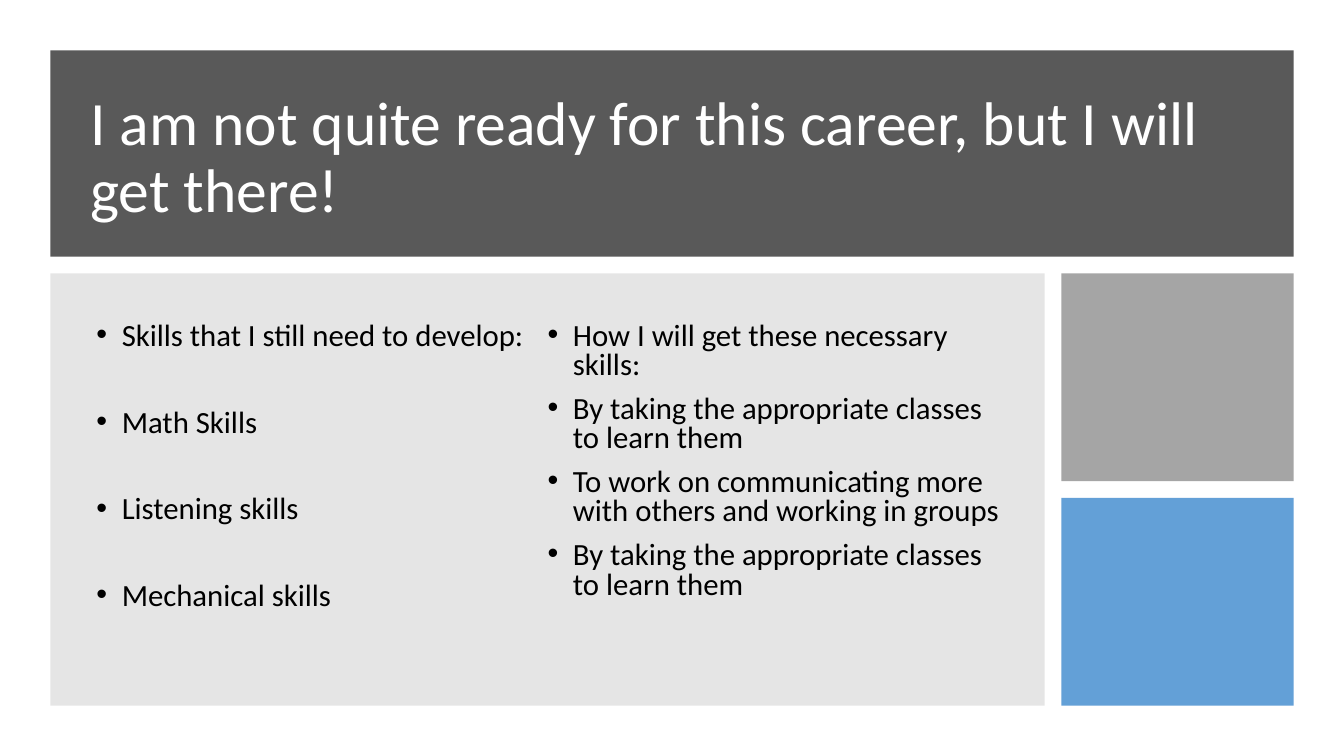
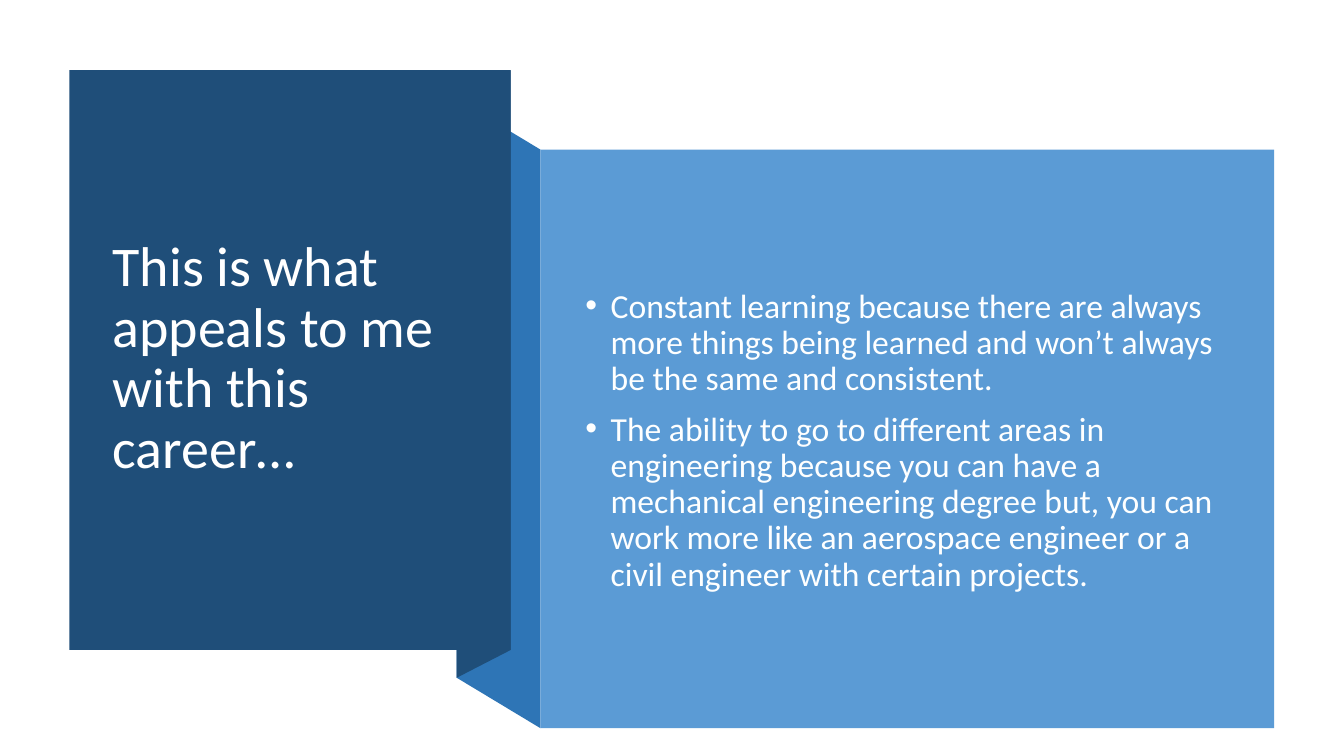
from pptx import Presentation
from pptx.dml.color import RGBColor
from pptx.enum.shapes import MSO_SHAPE
from pptx.enum.text import MSO_ANCHOR
from pptx.oxml.ns import qn
from pptx.util import Cm, Pt
from lxml.etree import SubElement

FONT = "Calibri"
WHITE = RGBColor(0xFF, 0xFF, 0xFF)
BLACK = RGBColor(0x00, 0x00, 0x00)
CHARCOAL = RGBColor(0x59, 0x59, 0x59)
MID_GRAY = RGBColor(0x80, 0x80, 0x80)
LIGHT_GRAY = RGBColor(0xA5, 0xA5, 0xA5)
BLUE = RGBColor(0x5B, 0x9B, 0xD5)
DARK_BLUE = RGBColor(0x2E, 0x75, 0xB6)
NAVY = RGBColor(0x1F, 0x4E, 0x79)
SOFT_WHITE = RGBColor(0xFE, 0xFF, 0xFF)

SLIDE_WIDTH, SLIDE_HEIGHT = 33.87, 19.05
INDENT = 0.64

SKILLS_TITLE = "I am not quite ready for this career, but I will get there!"
SKILL_COLUMNS = [
    (41, [
        "Skills that I still need to develop:",
        "Math Skills",
        "Listening skills",
        "Mechanical skills",
    ]),
    (10, [
        "How I will get these necessary skills:",
        "By taking the appropriate classes to learn them",
        "To work on communicating more with others and working in groups",
        "By taking the appropriate classes to learn them",
    ]),
]
APPEAL_TITLE = "This is what appeals to me with this career…"
APPEAL_POINTS = [
    "Constant learning because there are always more things being learned "
    "and won’t always be the same and consistent.",
    "The ability to go to different areas in engineering because you can have "
    "a mechanical engineering degree but, you can work more like an aerospace "
    "engineer or a civil engineer with certain projects.",
]


def paint(shape, color, opacity=100):
    shape.shadow.inherit = False
    shape.fill.solid()
    shape.fill.fore_color.rgb = color
    shape.line.fill.background()
    if opacity < 100:
        color_element = shape.fill._xPr.find(qn("a:solidFill"))[0]
        SubElement(color_element, qn("a:alpha"), val=str(opacity * 1000))


def add_block(slide, left, top, width, height, color, opacity=100):
    shape = slide.shapes.add_shape(
        MSO_SHAPE.RECTANGLE, Cm(left), Cm(top), Cm(width), Cm(height))
    paint(shape, color, opacity)


def add_polygon(slide, points, color):
    start, *others = [(Cm(x), Cm(y)) for x, y in points]
    builder = slide.shapes.build_freeform(*start)
    builder.add_line_segments(others, close=True)
    paint(builder.convert_to_shape(), color)


def add_text(slide, box, lines, size, color, spacing=0.9, gap=0,
             bullets=False, anchor=MSO_ANCHOR.MIDDLE):
    frame = slide.shapes.add_textbox(*map(Cm, box)).text_frame
    frame.word_wrap = True
    frame.vertical_anchor = anchor
    for index, line in enumerate(lines):
        paragraph = frame.paragraphs[0] if index == 0 else frame.add_paragraph()
        paragraph.line_spacing = spacing
        paragraph.space_after = Pt(gap)
        if bullets:
            properties = paragraph._p.get_or_add_pPr()
            properties.set("marL", str(Cm(INDENT)))
            properties.set("indent", str(-Cm(INDENT)))
            SubElement(properties, qn("a:buFont"), typeface="Arial")
            SubElement(properties, qn("a:buChar"), char="•")
        run = paragraph.add_run()
        run.text = line
        run.font.name = FONT
        run.font.size = Pt(size)
        run.font.color.rgb = color


def build_skills(slide):
    margin, gap = 1.27, 0.42
    banner_height, tile_width = 5.2, 5.85
    content_width = SLIDE_WIDTH - 2 * margin
    panel_top = margin + banner_height + gap
    panel_height = SLIDE_HEIGHT - margin - panel_top
    panel_width = content_width - tile_width - gap
    tile_left = margin + panel_width + gap
    tile_height = (panel_height - gap) / 2

    add_block(slide, margin, margin, content_width, banner_height, CHARCOAL)
    add_text(slide, (2.03, 2.03, 29.62, 3.96), [SKILLS_TITLE], 44, WHITE)
    add_block(slide, margin, panel_top, panel_width, panel_height, MID_GRAY, 20)
    for index, (color, opacity) in enumerate([(LIGHT_GRAY, 100), (BLUE, 95)]):
        tile_top = panel_top + index * (tile_height + gap)
        add_block(slide, tile_left, tile_top, tile_width, tile_height, color, opacity)

    column_pitch = 11.37
    for index, (space, lines) in enumerate(SKILL_COLUMNS):
        box = (2.18 + index * column_pitch, 8, column_pitch + 0.6, 8.8)
        add_text(slide, box, lines, 22, BLACK, 0.8, space, True, MSO_ANCHOR.TOP)


def build_appeal(slide):
    card_left, card_top, card_width, card_height = 1.75, 1.77, 11.12, 14.61
    card_right, card_bottom = card_left + card_width, card_top + card_height
    panel_left, panel_top, panel_width, panel_height = 13.62, 3.77, 18.49, 14.58
    fold_left, fold_top, fold_bottom = 11.51, 2.5, 17.08

    add_polygon(slide, [
        (panel_left, panel_top + panel_height), (fold_left, fold_bottom),
        (fold_left, fold_top), (panel_left, panel_top)], DARK_BLUE)
    add_polygon(slide, [
        (card_right, card_bottom), (fold_left, fold_bottom),
        (fold_left, fold_top), (card_right, card_top)], NAVY)
    add_block(slide, card_left, card_top, card_width, card_height, NAVY)
    add_text(slide, (2.59, 2.72, 9.42, 12.67), [APPEAL_TITLE], 40, WHITE)
    add_block(slide, panel_left, panel_top, panel_width, panel_height, BLUE)
    add_text(slide, (14.5, 5.1, 16.54, 12.04), APPEAL_POINTS, 24, SOFT_WHITE,
             gap=10, bullets=True)


def main():
    presentation = Presentation()
    presentation.slide_width = Cm(SLIDE_WIDTH)
    presentation.slide_height = Cm(SLIDE_HEIGHT)
    for build in (build_skills, build_appeal):
        build(presentation.slides.add_slide(presentation.slide_layouts[6]))
    presentation.save("out.pptx")


if __name__ == "__main__":
    main()
